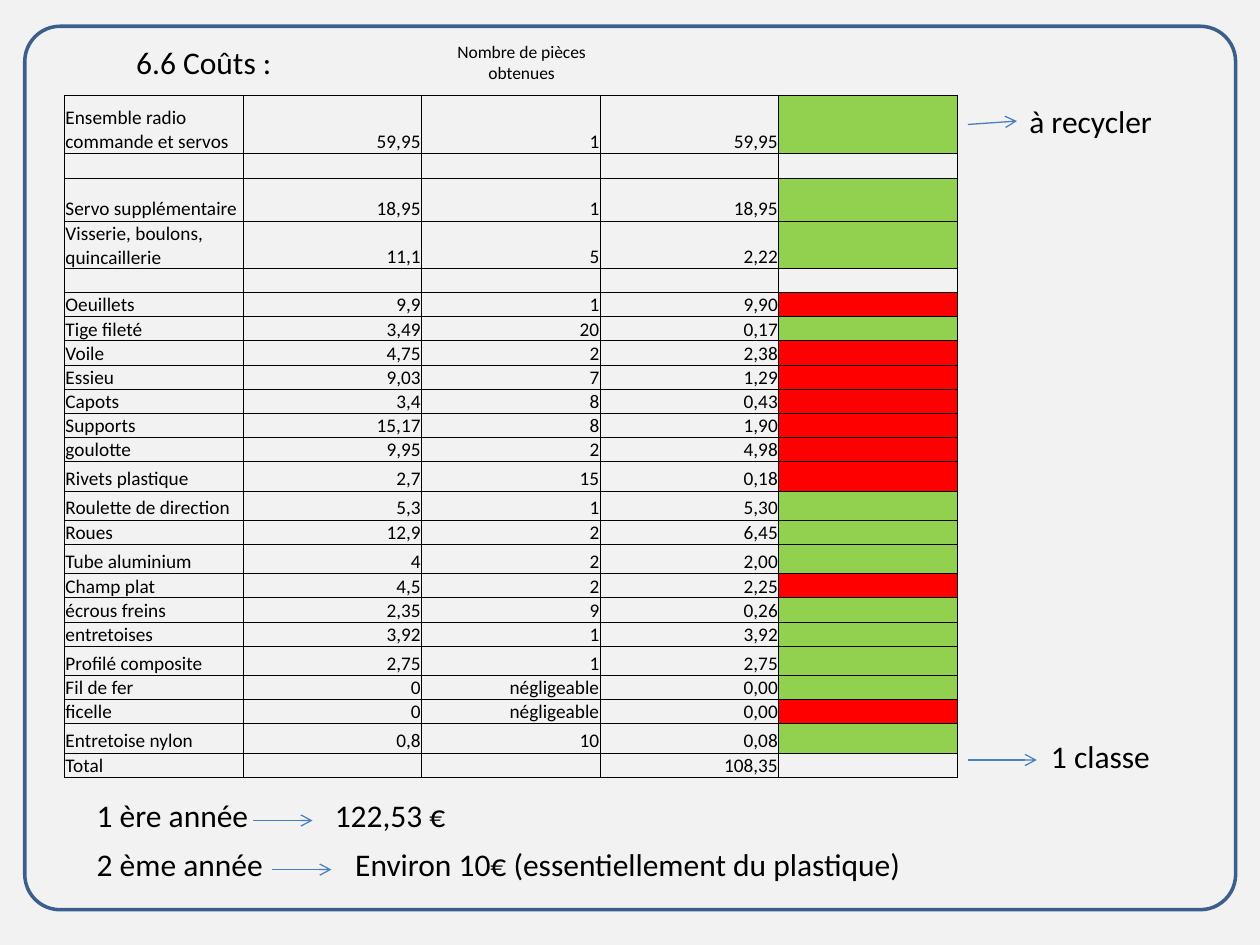
from dataclasses import dataclass
from typing import Optional

from lxml.etree import SubElement
from pptx import Presentation
from pptx.dml.color import RGBColor
from pptx.enum.shapes import MSO_CONNECTOR, MSO_SHAPE
from pptx.enum.text import MSO_ANCHOR, MSO_AUTO_SIZE, PP_ALIGN
from pptx.oxml import parse_xml
from pptx.oxml.ns import nsdecls, qn
from pptx.util import Cm, Pt


@dataclass(frozen=True)
class Theme:
    font: str = "Calibri"
    background: str = "F2F2F2"
    ink: str = "000000"
    frame: str = "3A5F8C"
    arrow: str = "4B7EBC"
    green: str = "92D050"
    red: str = "FF0000"
    body_size: float = 18
    table_size: float = 11
    header_size: float = 10


@dataclass(frozen=True)
class Cost:
    label: str = ""
    price: str = ""
    pieces: str = ""
    unit_cost: str = ""
    status: Optional[str] = None
    height: float = 0.48


@dataclass(frozen=True)
class Label:
    text: str
    left: float
    top: float
    width: float
    height: float = 1.02
    size: float = Theme.body_size
    align: PP_ALIGN = PP_ALIGN.LEFT


@dataclass(frozen=True)
class Arrow:
    start: tuple[float, float]
    end: tuple[float, float]
    target: Optional[str] = None  # label whose left side the arrow joins


THEME = Theme()
GREEN, RED = THEME.green, THEME.red
TALL = 0.59  # row height in cm
COLUMN_WIDTH = 3.6

COSTS = [
    Cost("Ensemble radio commande et servos", "59,95", "1", "59,95", GREEN, 1.17),
    Cost(),
    Cost("Servo supplémentaire", "18,95", "1", "18,95", GREEN, 0.87),
    Cost("Visserie, boulons, quincaillerie", "11,1", "5", "2,22", GREEN, 0.95),
    Cost(),
    Cost("Oeuillets", "9,9", "1", "9,90", RED),
    Cost("Tige fileté", "3,49", "20", "0,17", GREEN),
    Cost("Voile", "4,75", "2", "2,38", RED),
    Cost("Essieu", "9,03", "7", "1,29", RED),
    Cost("Capots", "3,4", "8", "0,43", RED),
    Cost("Supports", "15,17", "8", "1,90", RED),
    Cost("goulotte", "9,95", "2", "4,98", RED),
    Cost("Rivets plastique", "2,7", "15", "0,18", RED, TALL),
    Cost("Roulette de direction", "5,3", "1", "5,30", GREEN, TALL),
    Cost("Roues", "12,9", "2", "6,45", GREEN),
    Cost("Tube aluminium", "4", "2", "2,00", GREEN, TALL),
    Cost("Champ plat", "4,5", "2", "2,25", RED),
    Cost("écrous freins", "2,35", "9", "0,26", GREEN),
    Cost("entretoises", "3,92", "1", "3,92", GREEN),
    Cost("Profilé composite", "2,75", "1", "2,75", GREEN, TALL),
    Cost("Fil de fer", "0", "négligeable", "0,00", GREEN),
    Cost("ficelle", "0", "négligeable", "0,00", RED),
    Cost("Entretoise nylon", "0,8", "10", "0,08", GREEN, TALL),
    Cost("Total", unit_cost="108,35"),
]

TITLE = Label("6.6 Coûts :", 2.49, 0.74, 3.81)
LABELS = [
    Label("1 ère année", 1.7, 15.93, 5.56),
    Label("122,53 €", 6.5, 15.93, 4.57),
    Label("2 ème année", 1.7, 16.92, 3.96),
    Label("Environ 10€ (essentiellement du plastique)", 6.91, 16.92, 15.8),
    Label("1 classe", 19.71, 14.73, 4.95, align=PP_ALIGN.CENTER),
    Label("Nombre de pièces obtenues", 8.51, 0.71, 4.01, 1.12,
          THEME.header_size, PP_ALIGN.CENTER),
    Label("à recycler", 20.5, 1.93, 3.2),
]
ARROWS = [
    Arrow((5.11, 16.54), (6.3, 16.54)),
    Arrow((5.49, 17.53), (6.68, 17.53)),
    Arrow((19.51, 15.32), (20.9, 15.32)),
    Arrow((19.51, 2.51), (20.5, 2.44), target="à recycler"),
]


def write_text(frame, text: str, *, size: float, align=PP_ALIGN.LEFT) -> None:
    paragraph = frame.paragraphs[0]
    paragraph.alignment = align
    if not text:  # an empty cell keeps the row's type size
        SubElement(paragraph._p, qn("a:endParaRPr"), sz=str(int(size * 100)))
        return
    run = paragraph.add_run()
    run.text = text
    run.font.name = THEME.font
    run.font.size = Pt(size)
    run.font.bold = False
    run.font.color.rgb = RGBColor.from_string(THEME.ink)


def fill_label(shape, label: Label):
    frame = shape.text_frame
    frame.word_wrap = True
    frame.vertical_anchor = MSO_ANCHOR.TOP
    frame.auto_size = MSO_AUTO_SIZE.SHAPE_TO_FIT_TEXT
    write_text(frame, label.text, size=label.size, align=label.align)
    return shape


def bounds(label: Label) -> list:
    return [Cm(v) for v in (label.left, label.top, label.width, label.height)]


def draw_arrow(slide, arrow: Arrow, boxes: dict) -> None:
    points = [Cm(v) for v in (*arrow.start, *arrow.end)]
    line = slide.shapes.add_connector(MSO_CONNECTOR.STRAIGHT, *points)
    if arrow.target:
        line.end_connect(boxes[arrow.target], 1)
    line.line.color.rgb = RGBColor.from_string(THEME.arrow)
    line.line.width = Pt(0.75)
    SubElement(line.line._get_or_add_ln(), qn("a:tailEnd"), type="arrow")
    SubElement(line._element.spPr, qn("a:effectLst"))


def format_cell(cell, text: str, align, color: Optional[str]) -> None:
    cell.margin_left = cell.margin_right = cell.margin_top = Cm(0.02)
    cell.margin_bottom = 0
    cell.vertical_anchor = MSO_ANCHOR.BOTTOM
    write_text(cell.text_frame, text, size=THEME.table_size, align=align)
    if color:
        cell.fill.solid()
        cell.fill.fore_color.rgb = RGBColor.from_string(color)
    else:
        cell.fill.background()
    properties = cell._tc.get_or_add_tcPr()
    for position, side in enumerate(("lnL", "lnR", "lnT", "lnB")):
        properties.insert(position, parse_xml(
            f'<a:{side} {nsdecls("a")} w="{Pt(0.5)}"><a:solidFill>'
            f'<a:srgbClr val="{THEME.ink}"/></a:solidFill></a:{side}>'))


def draw_costs(slide, costs: list[Cost]) -> None:
    height = sum(cost.height for cost in costs)
    table = slide.shapes.add_table(len(costs), 5, Cm(1.3), Cm(1.93),
                                   Cm(5 * COLUMN_WIDTH), Cm(height)).table
    table.first_row = table.horz_banding = False
    for column in table.columns:
        column.width = Cm(COLUMN_WIDTH)
    for row, cost in zip(table.rows, costs):
        row.height = Cm(cost.height)
        texts = (cost.label, cost.price, cost.pieces, cost.unit_cost, "")
        for index, (cell, text) in enumerate(zip(row.cells, texts)):
            format_cell(cell, text,
                        PP_ALIGN.RIGHT if index else PP_ALIGN.LEFT,
                        cost.status if index == 4 else None)


def main() -> None:
    presentation = Presentation()
    presentation.slide_width, presentation.slide_height = Cm(25.4), Cm(19.05)
    slide = presentation.slides.add_slide(presentation.slide_layouts[5])
    slide.background.fill.solid()
    slide.background.fill.fore_color.rgb = RGBColor.from_string(THEME.background)

    # Title and labels
    title = slide.shapes.title
    title.left, title.top, title.width, title.height = bounds(TITLE)
    fill_label(title, TITLE)
    boxes = {label.text: fill_label(slide.shapes.add_textbox(*bounds(label)), label)
             for label in LABELS}

    # Rounded frame around the slide
    frame = slide.shapes.add_shape(MSO_SHAPE.ROUNDED_RECTANGLE, Cm(0.5), Cm(0.53),
                                   Cm(24.41), Cm(17.81))
    frame.adjustments[0] = 0.04
    frame.shadow.inherit = False
    frame.fill.background()
    frame.line.color.rgb = RGBColor.from_string(THEME.frame)
    frame.line.width = Pt(2)

    # Cost table and arrows
    draw_costs(slide, COSTS)
    for arrow in ARROWS:
        draw_arrow(slide, arrow, boxes)

    presentation.save("out.pptx")


if __name__ == "__main__":
    main()
